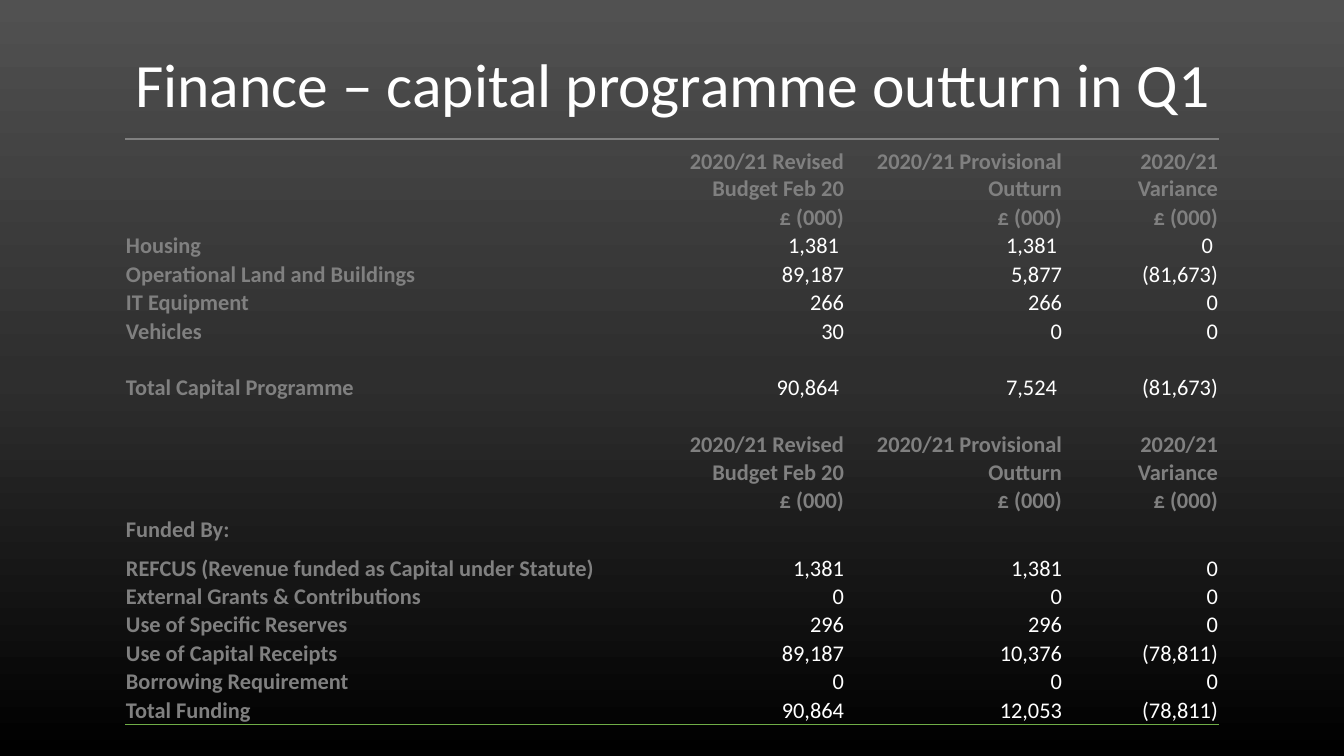
"""Build the capital programme outturn slide."""
from copy import deepcopy

from lxml import etree
from pptx import Presentation
from pptx.dml.color import RGBColor
from pptx.enum.text import MSO_ANCHOR, PP_ALIGN
from pptx.oxml.ns import qn
from pptx.util import Emu, Pt

SCALE = 12192000 / 1344
MIDDLE, BOTTOM = MSO_ANCHOR.MIDDLE, MSO_ANCHOR.BOTTOM
LEFT, RIGHT = PP_ALIGN.LEFT, PP_ALIGN.RIGHT
FONT = "Calibri"
NO_STYLE = "{2D5ABB26-0587-4C30-8999-92F81FD0307C}"
COLORS = {
    "top": "515151",
    "centre": "2E2E2E",
    "base": "000000",
    "label": "808080",
    "figure": "FFFFFF",
    "top_rule": "808080",
    "bottom_rule": "70AD47",
}

BLANK = ("", "", "", "")
HEADINGS = ("", "2020/21 Revised Budget Feb 20", "2020/21 Provisional Outturn", "2020/21 Variance")
UNITS = ("", "£ (000)", "£ (000)", "£ (000)")
ROWS = [
    HEADINGS,
    UNITS,
    ("Housing", "1,381 ", "1,381 ", "0 "),
    ("Operational Land and Buildings", "89,187", "5,877", "(81,673)"),
    ("IT Equipment", "266", "266", "0"),
    ("Vehicles", "30", "0", "0"),
    BLANK,
    ("Total Capital Programme", "90,864 ", "7,524 ", "(81,673)"),
    BLANK,
    HEADINGS,
    UNITS,
    ("Funded By:", "", "", ""),
    ("REFCUS (Revenue funded as Capital under Statute)", "1,381", "1,381", "0"),
    ("External Grants & Contributions", "0", "0", "0"),
    ("Use of Specific Reserves", "296", "296", "0"),
    ("Use of Capital Receipts", "89,187", "10,376", "(78,811)"),
    ("Borrowing Requirement", "0", "0", "0"),
    ("Total Funding", "90,864", "12,053", "(78,811)"),
]
COLUMN_WIDTHS = [513, 207, 218, 156]
ROW_HEIGHT = 28
TALL_ROWS = {0: 64, 9: 56, 12: 39}


def px(length):
    return Emu(round(length * SCALE))


def add_rule(cell, side, color):
    rule = etree.Element(qn(f"a:{side}"), w=str(Pt(1)))
    fill = etree.SubElement(rule, qn("a:solidFill"))
    etree.SubElement(fill, qn("a:srgbClr"), val=COLORS[color])
    cell._tc.get_or_add_tcPr().insert(0, rule)


prs = Presentation()
prs.slide_width, prs.slide_height = px(1344), px(756)
slide = prs.slides.add_slide(prs.slide_layouts[5])

backdrop = slide.background.fill
backdrop.gradient()
backdrop.gradient_angle = 270
stop_list = slide._element.find(f".//{qn('a:gsLst')}")
stop_list.append(deepcopy(stop_list[0]))
for stop, position, color in zip(backdrop.gradient_stops, (0, 0.5, 1), ("top", "centre", "base")):
    stop.position = position
    stop.color.rgb = RGBColor.from_string(COLORS[color])

title = slide.shapes.title
for side, length in {"left": 125, "top": 15, "width": 1159, "height": 146}.items():
    setattr(title, side, px(length))
title.text_frame.text = "Finance – capital programme outturn in Q1"
title.text_frame.vertical_anchor = MIDDLE
heading = title.text_frame.paragraphs[0]
heading.alignment = LEFT
heading.line_spacing = 0.9
heading_font = heading.runs[0].font
for name, value in {"name": FONT, "size": Pt(44), "bold": False}.items():
    setattr(heading_font, name, value)
heading_font.color.rgb = RGBColor.from_string(COLORS["figure"])

row_heights = [TALL_ROWS.get(index, ROW_HEIGHT) for index in range(len(ROWS))]
programme = slide.shapes.add_table(
    len(ROWS), len(COLUMN_WIDTHS), px(125), px(139), px(sum(COLUMN_WIDTHS)), px(sum(row_heights))
).table
programme.first_row = programme.horz_banding = False
programme._tbl.tblPr.find(qn("a:tableStyleId")).text = NO_STYLE
for column, width in zip(programme.columns, COLUMN_WIDTHS):
    column.width = px(width)
for row, height in zip(programme.rows, row_heights):
    row.height = px(height)

cell_format = {
    "margin_left": px(1),
    "margin_right": px(1),
    "margin_top": px(1),
    "margin_bottom": 0,
    "vertical_anchor": BOTTOM,
}
for row_index, entries in enumerate(ROWS):
    for column_index, entry in enumerate(entries):
        cell = programme.cell(row_index, column_index)
        for name, value in cell_format.items():
            setattr(cell, name, value)
        cell.fill.background()
        line = cell.text_frame.paragraphs[0]
        line.alignment = RIGHT if column_index else LEFT
        if not entry:
            line._p.get_or_add_endParaRPr().set("sz", "1600")
            continue
        is_label = column_index == 0 or entries in (HEADINGS, UNITS)
        run = line.add_run()
        run.text = entry
        for name, value in {"name": FONT, "size": Pt(16), "bold": is_label}.items():
            setattr(run.font, name, value)
        run.font.color.rgb = RGBColor.from_string(COLORS["label" if is_label else "figure"])

for column_index in range(len(COLUMN_WIDTHS)):
    add_rule(programme.cell(0, column_index), "lnT", "top_rule")
    add_rule(programme.cell(len(ROWS) - 1, column_index), "lnB", "bottom_rule")

prs.save("out.pptx")
